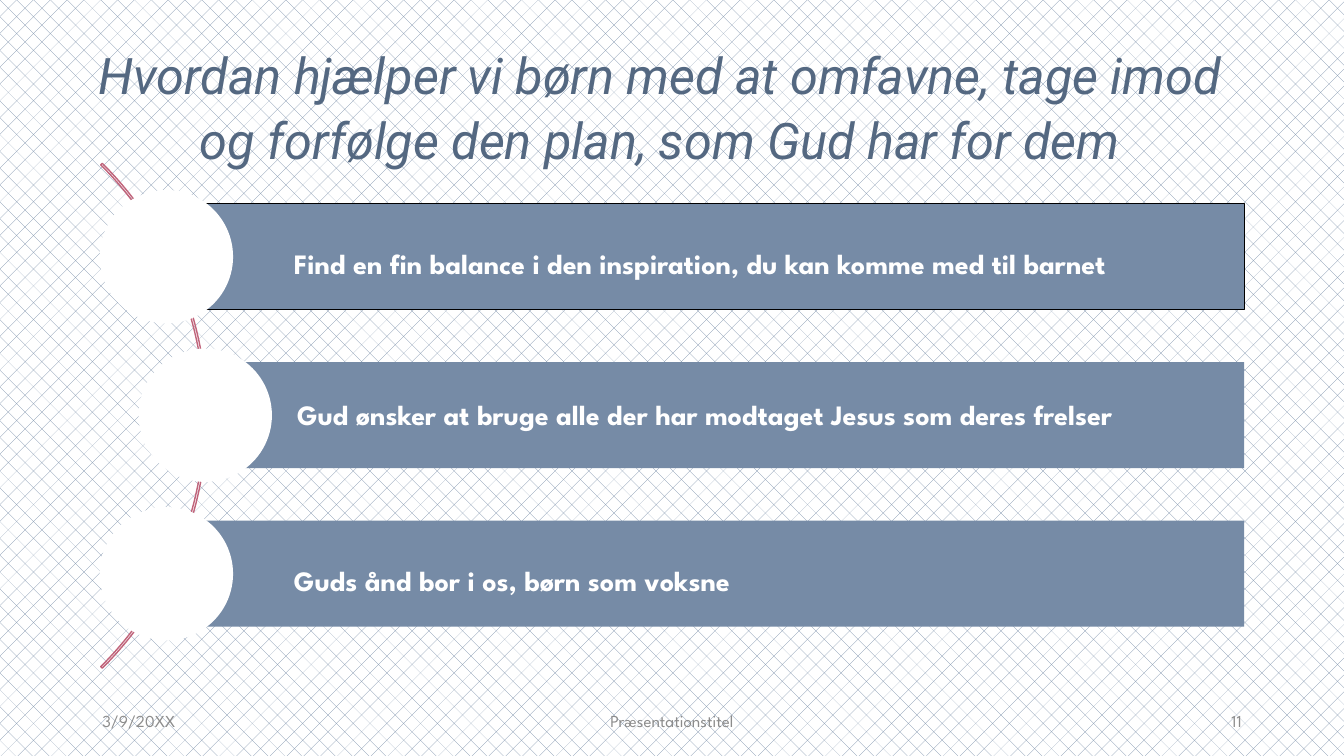
from pptx import Presentation
from pptx.dml.color import RGBColor
from pptx.enum.dml import MSO_PATTERN
from pptx.enum.shapes import MSO_SHAPE as Shape
from pptx.enum.text import MSO_ANCHOR as Anchor, MSO_AUTO_SIZE as AutoSize, PP_ALIGN as Align
from pptx.util import Pt

PX = 9525
SLATE = RGBColor(0x76, 0x8B, 0xA6)
NAVY = RGBColor(0x54, 0x68, 0x81)
ROSE = RGBColor(0xC0, 0x63, 0x7A)
GREY = RGBColor(0x8C, 0x8C, 0x8C)
WHITE = RGBColor(0xFF, 0xFF, 0xFF)
BLACK = RGBColor(0, 0, 0)

BAR_HEIGHT, BAR_STEP, CIRCLE = 101, 151, 127
POINTS = [
    ("Find en fin balance i den inspiration, du kan komme med til barnet", 63, 122, (28, 11), BLACK),
    ("Gud ønsker at bruge alle der har modtaget Jesus som deres frelser", 100, 88, (10, 7), None),
    ("Guds ånd bor i os, børn som voksne", 63, 122, (28, 11), None),
]


def px(*lengths):
    return [round(length * PX) for length in lengths]


def style(paragraph, face, size, color, align, bold=False, italic=False):
    paragraph.alignment = align
    font = paragraph.font
    font.name, font.size, font.color.rgb = face, Pt(size), color
    font.bold, font.italic = bold, italic


def add_plain(slide, kind, box, fill=None, line=None, width=0.75):
    plain = slide.shapes.add_shape(kind, *px(*box))
    plain.shadow.inherit = False
    if fill is None:
        plain.fill.background()
    else:
        plain.fill.solid()
        plain.fill.fore_color.rgb = fill
    if line is None:
        plain.line.fill.background()
    else:
        plain.line.color.rgb = line
        plain.line.width = Pt(width)
    return plain


def paint_background(slide):
    fill = slide.background.fill
    fill.patterned()
    fill.pattern = MSO_PATTERN.DOTTED_DIAMOND
    fill.fore_color.rgb = SLATE
    fill.back_color.rgb = WHITE


def place_title(slide, box, wording):
    title = slide.shapes.title
    title.left, title.top, title.width, title.height = px(*box)
    frame = title.text_frame
    frame.text = wording
    frame.auto_size = AutoSize.NONE
    frame.word_wrap = True
    frame.vertical_anchor = Anchor.MIDDLE
    heading = frame.paragraphs[0]
    style(heading, "Roboto", 36, NAVY, Align.CENTER, italic=True)
    heading.line_spacing = 1.07
    heading.space_after = Pt(8)


def add_bar(slide, box, wording, indent, insets, outline):
    left, top, _, height = box
    frame = add_plain(slide, Shape.RECTANGLE, box, SLATE, outline).text_frame
    frame.text = wording
    frame.word_wrap = True
    frame.vertical_anchor = Anchor.MIDDLE
    frame.margin_left, frame.margin_right = px(indent, 7)
    frame.margin_top, frame.margin_bottom = px(*insets)
    point = frame.paragraphs[0]
    style(point, "League Spartan", 20, WHITE, Align.LEFT, bold=True)
    point.line_spacing = 0.9
    circle_top = top + (height - CIRCLE) / 2
    add_plain(slide, Shape.OVAL, (left - CIRCLE // 2, circle_top, CIRCLE, CIRCLE), WHITE)


def add_points(slide, box):
    left, top, width, _ = box
    arc = add_plain(slide, Shape.BLOCK_ARC, (left - 578, top - 138, 680, 680), line=ROSE, width=1)
    for index, value in enumerate((189, 27, 0.003)):
        arc.adjustments[index] = value
    for row, (wording, offset, indent, insets, outline) in enumerate(POINTS):
        bar = (left + offset, top + row * BAR_STEP, width - offset, BAR_HEIGHT)
        add_bar(slide, bar, wording, indent, insets, outline)


def add_footer(slide, box):
    left, top, width, height = box
    side, middle = 288, 432
    entries = [
        ("3/9/20XX", left, side, Align.LEFT),
        ("Præsentationstitel", left + (width - middle) // 2, middle, Align.CENTER),
        ("11", left + width - side, side, Align.RIGHT),
    ]
    for wording, start, span, align in entries:
        frame = slide.shapes.add_textbox(*px(start, top, span, height)).text_frame
        frame.text = wording
        frame.word_wrap = True
        frame.vertical_anchor = Anchor.MIDDLE
        style(frame.paragraphs[0], "League Spartan", 12, GREY, align)
        frame.paragraphs[0].space_after = Pt(6)


def main():
    deck = Presentation()
    deck.slide_width, deck.slide_height = px(1280, 720)
    slide = deck.slides.add_slide(deck.slide_layouts[5])
    paint_background(slide)
    place_title(slide, (66, 38, 1126, 124),
                "Hvordan hjælper vi børn med at omfavne, tage imod og forfølge den plan, som Gud har for dem")
    add_points(slide, (95, 194, 1090, 403))
    add_footer(slide, (88, 667, 1104, 38))
    deck.save("out.pptx")


if __name__ == "__main__":
    main()
